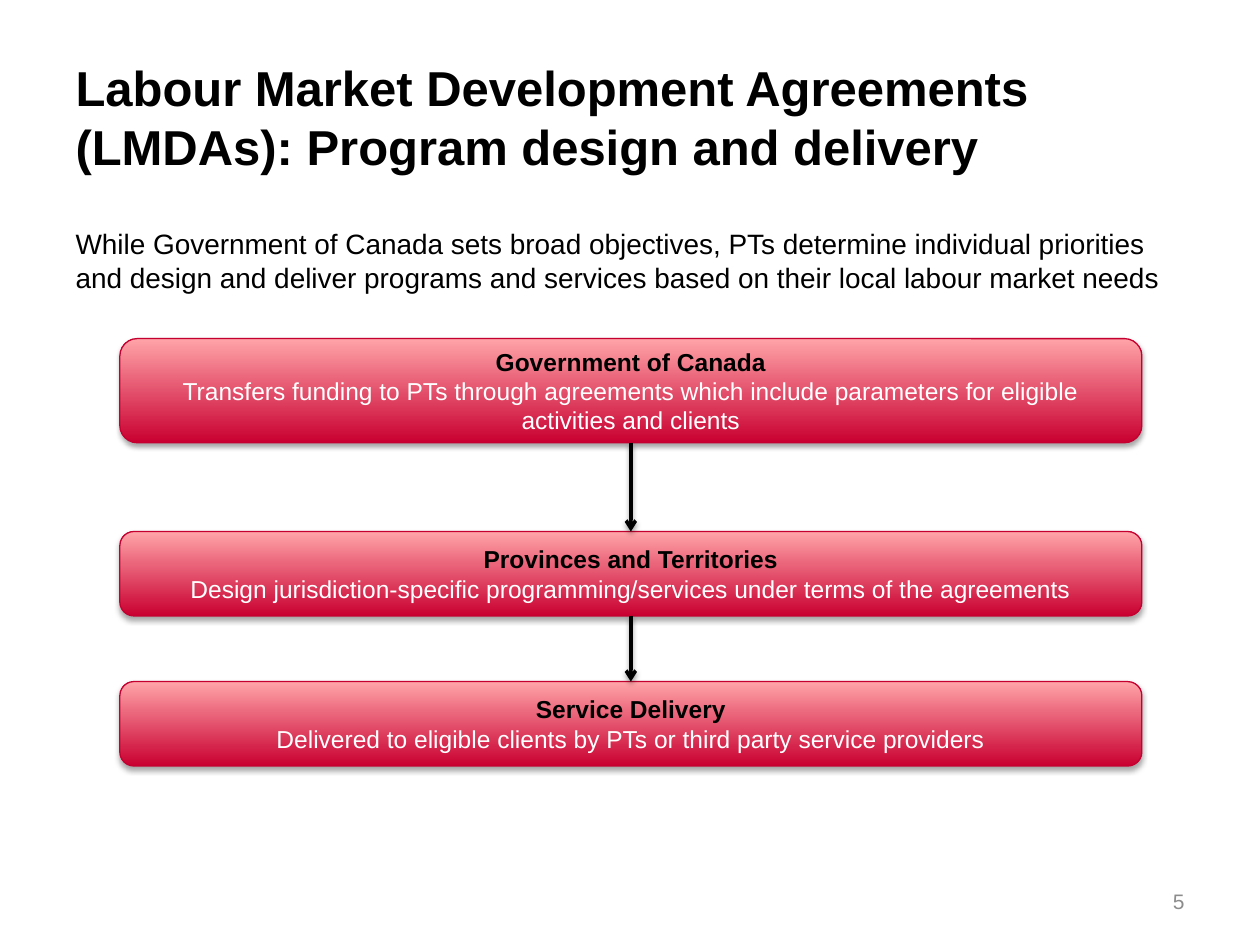
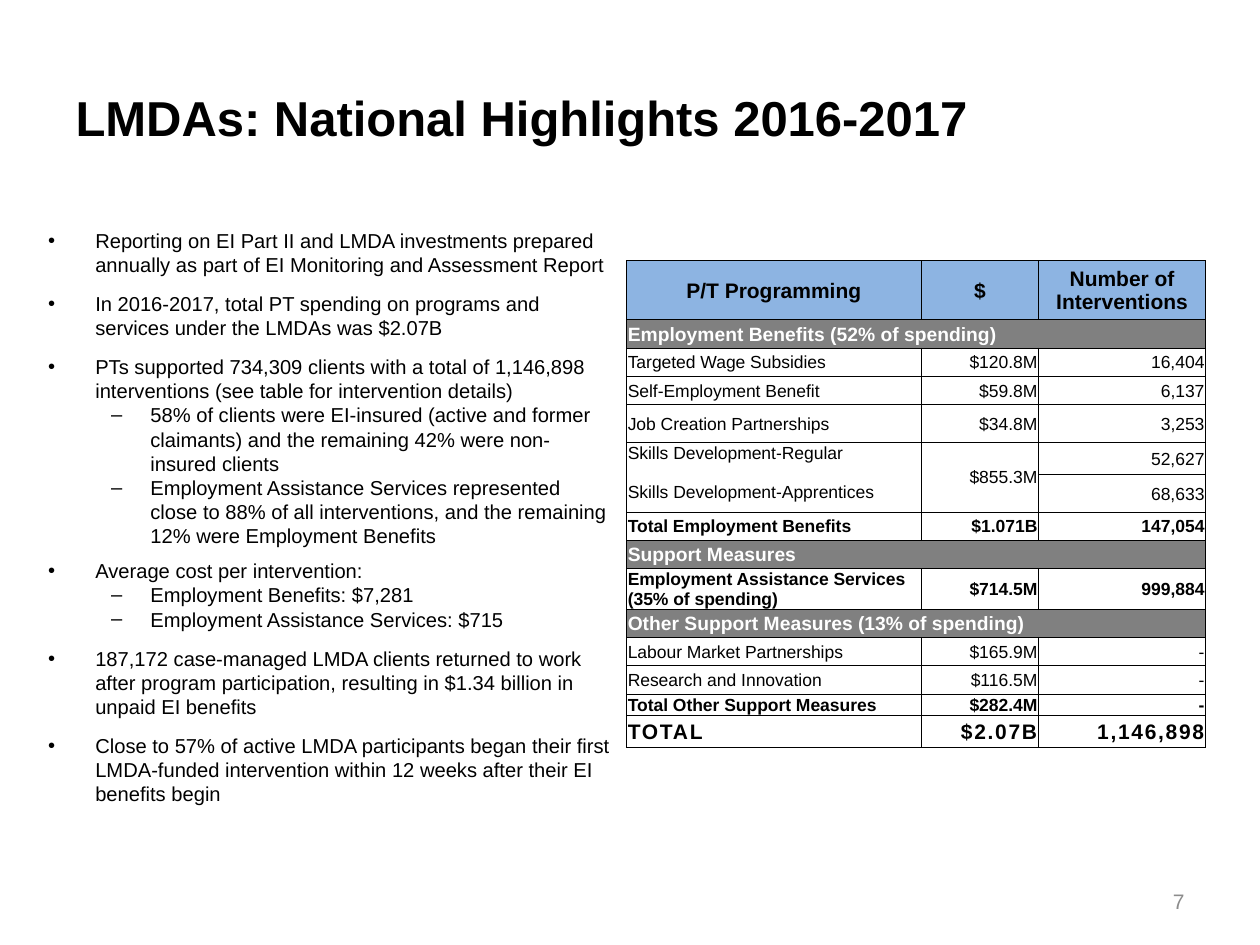
from lxml import etree
from pptx import Presentation
from pptx.dml.color import RGBColor
from pptx.enum import shapes, text
from pptx.oxml import ns
from pptx.util import Pt

# Shared look
FONT = "Arial"
BLACK = RGBColor(0x00, 0x00, 0x00)
WHITE = RGBColor(0xFF, 0xFF, 0xFF)
PAGE_GREY = RGBColor(0x8C, 0x8C, 0x8C)
SECTION_GREY = RGBColor(0x80, 0x80, 0x80)
HEADER_BLUE = RGBColor(0x8D, 0xB4, 0xE2)
DEEP_RED = RGBColor(0xC9, 0x00, 0x31)
PALE_RED = RGBColor(0xFF, 0xA4, 0xA8)
EDGE_RED = RGBColor(0xC5, 0x00, 0x30)

LEFT, CENTER, RIGHT = text.PP_ALIGN.LEFT, text.PP_ALIGN.CENTER, text.PP_ALIGN.RIGHT
TOP, MIDDLE = text.MSO_ANCHOR.TOP, text.MSO_ANCHOR.MIDDLE

# Flow chart: top, height, heading, description
STEPS = [
    (193.5, 59.5, "Government of Canada",
     "Transfers funding to PTs through agreements which include parameters "
     "for eligible activities and clients"),
    (303.75, 48.25, "Provinces and Territories",
     "Design jurisdiction-specific programming/services under terms of the agreements"),
    (389.5, 48.25, "Service Delivery",
     "Delivered to eligible clients by PTs or third party service providers"),
]

# Highlights: level, space before, wording
HIGHLIGHTS = [
    (0, 0, "Reporting on EI Part II and LMDA investments prepared annually as part of "
           "EI Monitoring and Assessment Report"),
    (0, 8.5, "In 2016-2017, total PT spending on programs and services under the LMDAs was $2.07B"),
    (0, 8.5, "PTs supported 734,309 clients with a total of 1,146,898 interventions "
             "(see table for intervention details)"),
    (1, 0, "58% of clients were EI-insured (active and former claimants) and the remaining "
           "42% were non-insured clients"),
    (1, 0, "Employment Assistance Services represented close to 88% of all interventions, "
           "and the remaining 12% were Employment Benefits"),
    (0, 6.25, "Average cost per intervention:"),
    (1, 0, "Employment Benefits: $7,281"),
    (1, 0, "Employment Assistance Services: $715"),
    (0, 8.5, "187,172 case-managed LMDA clients returned to work after program participation, "
             "resulting in $1.34 billion in unpaid EI benefits"),
    (0, 8.5, "Close to 57% of active LMDA participants began their first LMDA-funded "
             "intervention within 12 weeks after their EI benefits begin"),
]
LEVELS = [("•", 27, -27), ("–", 58.5, -22.5)]  # bullet, margin, indent

# Spending table: row kind, height, cells
SPENDING = [
    ("header", 33.75, "P/T Programming", "$", "Number of Interventions"),
    ("section", 16.2, "Employment Benefits (52% of spending)"),
    ("plain", 16.2, "Targeted Wage Subsidies", "$120.8M", "16,404"),
    ("plain", 16.2, "Self-Employment Benefit", "$59.8M", "6,137"),
    ("plain", 21.6, "Job Creation Partnerships", "$34.8M", "3,253"),
    ("plain", 18.5, "Skills Development-Regular\nSkills Development-Apprentices",
     "$855.3M", "52,627"),
    ("plain", 21.2, "", "", "68,633"),
    ("total", 16.2, "Total Employment Benefits", "$1.071B", "147,054"),
    ("section", 16.2, "Support Measures"),
    ("total", 18.5, "Employment Assistance Services\n(35% of spending)", "$714.5M", "999,884"),
    ("section", 16.2, "Other Support Measures (13% of spending)"),
    ("plain", 16.2, "Labour Market Partnerships", "$165.9M", "-"),
    ("plain", 16.2, "Research and Innovation", "$116.5M", "-"),
    ("total", 12, "Total Other Support Measures", "$282.4M", "-"),
    ("grand", 18.75, "TOTAL", "$2.07B", "1,146,898"),
]
SKILLS_ROW = 5
COLUMN_WIDTHS = (168.5, 67, 95.5)
ROW_STYLES = {  # fill, text size, colour, bold
    "header": (HEADER_BLUE, 12, BLACK, True),
    "section": (SECTION_GREY, 11, WHITE, True),
    "plain": (WHITE, 10, BLACK, False),
    "total": (WHITE, 10, BLACK, True),
    "grand": (WHITE, 12, BLACK, True),
}


def set_all(obj, **values):
    for name, value in values.items():
        setattr(obj, name, value)


def sub(parent, tag, **attrs):
    el = etree.SubElement(parent, ns.qn(tag))
    for name, value in attrs.items():
        el.set(name, str(value))
    return el


def write(p, words, size, color=BLACK, bold=False, align=LEFT, before=0):
    set_all(p, alignment=align, space_before=Pt(before))
    r = p.add_run()
    r.text = words
    set_all(r.font, name=FONT, size=Pt(size), bold=bold)
    r.font.color.rgb = color
    return r


def next_paragraph(tf, i):
    return tf.add_paragraph() if i else tf.paragraphs[0]


def place(sp, left, top, width, height, anchor):
    set_all(sp, left=Pt(left), top=Pt(top), width=Pt(width), height=Pt(height))
    set_all(sp.text_frame, word_wrap=True, vertical_anchor=anchor,
            auto_size=text.MSO_AUTO_SIZE.NONE)
    return sp.text_frame


def set_bullet(p, char, margin, indent):
    pPr = p._p.get_or_add_pPr()
    pPr.set("marL", str(Pt(margin)))
    pPr.set("indent", str(Pt(indent)))
    if char:
        sub(pPr, "a:buChar", char=char)
    else:
        sub(pPr, "a:buNone")


def add_shadow(effects, alpha, distance):
    shadow = sub(effects, "a:outerShdw", blurRad=Pt(3.1), dist=Pt(distance),
                 dir=90 * 60000, rotWithShape=0)
    sub(sub(shadow, "a:srgbClr", val=BLACK), "a:alpha", val=alpha * 1000)


def add_slide(prs, title, number):
    s = prs.slides.add_slide(prs.slide_layouts[1])
    tf = place(s.shapes.title, 36, 21.6, 648, 90, MIDDLE)
    write(tf.paragraphs[0], title, 28, bold=True)
    page = s.shapes.add_textbox(0, 0, 0, 0)
    tf = place(page, 516, 500.5, 168, 28.75, MIDDLE)
    write(tf.paragraphs[0], str(number), 12, PAGE_GREY, align=RIGHT)
    return s


def add_step(s, top, height, heading, description):
    sp = s.shapes.add_shape(shapes.MSO_SHAPE.ROUNDED_RECTANGLE, 0, 0, 0, 0)
    tf = place(sp, 68.5, top, 584, height, MIDDLE)
    sp.fill.gradient()
    sp.fill.gradient_angle = 90
    for stop, color in zip(sp.fill.gradient_stops, (DEEP_RED, PALE_RED)):
        stop.color.rgb = color
    sp.line.color.rgb = EDGE_RED
    sp.line.width = Pt(0.75)
    sp.shadow.inherit = False
    add_shadow(sp._element.spPr.find(ns.qn("a:effectLst")), 35, 1.8)
    write(tf.paragraphs[0], heading, 14, bold=True, align=CENTER)
    write(tf.add_paragraph(), description, 14, WHITE, align=CENTER)
    return sp


def add_arrow(s, upper, lower):
    c = s.shapes.add_connector(shapes.MSO_CONNECTOR.STRAIGHT, 0, 0, 0, 0)
    c.begin_connect(upper, 2)
    c.end_connect(lower, 0)
    c.line.color.rgb = BLACK
    c.line.width = Pt(2)
    sub(c.line._get_or_add_ln(), "a:tailEnd", type="arrow")
    add_shadow(sub(c._element.spPr, "a:effectLst"), 38, 1.6)


def add_highlights(s):
    tf = place(s.placeholders[1], 20.25, 126.75, 337, 334, TOP)
    for i, (level, before, words) in enumerate(HIGHLIGHTS):
        p = next_paragraph(tf, i)
        p.level = level
        set_bullet(p, *LEVELS[level])
        write(p, words, 11.5, before=before)


def add_borders(cell):
    tcPr = cell._tc.get_or_add_tcPr()
    for side in "LRTB":
        ln = sub(tcPr, f"a:ln{side}", w=Pt(0.5))
        sub(sub(ln, "a:solidFill"), "a:srgbClr", val=BLACK)


def fill_cell(cell, kind, column, words, gap):
    color, size, ink, bold = ROW_STYLES[kind]
    add_borders(cell)
    cell.fill.solid()
    cell.fill.fore_color.rgb = color
    set_all(cell, margin_left=Pt(0.75), margin_right=Pt(0.75), margin_top=Pt(0.75),
            margin_bottom=0, vertical_anchor=TOP if gap else MIDDLE)
    align = CENTER if kind == "header" else RIGHT if column else LEFT
    if not words:
        return
    for i, line in enumerate(words.split("\n")):
        r = write(next_paragraph(cell.text_frame, i), line, size, ink, bold, align,
                  gap if i else 0)
        if kind == "grand":
            r._r.get_or_add_rPr().set("spc", "100")


def add_spending_table(s):
    heights = [row[1] for row in SPENDING]
    frame = s.shapes.add_table(len(SPENDING), len(COLUMN_WIDTHS), Pt(358), Pt(149),
                               Pt(sum(COLUMN_WIDTHS)), Pt(sum(heights)))
    table = frame.table
    set_all(table, first_row=False, horz_banding=False)
    for column, width in zip(table.columns, COLUMN_WIDTHS):
        column.width = Pt(width)
    for i, (kind, height, *words) in enumerate(SPENDING):
        table.rows[i].height = Pt(height)
        for j in range(len(COLUMN_WIDTHS)):
            gap = 11 if (i, j) == (SKILLS_ROW, 0) else 0
            fill_cell(table.cell(i, j), kind, j, words[j] if j < len(words) else "", gap)
        if kind == "section":
            table.cell(i, 0).merge(table.cell(i, len(COLUMN_WIDTHS) - 1))
    for j in range(2):
        table.cell(SKILLS_ROW, j).merge(table.cell(SKILLS_ROW + 1, j))


def main():
    prs = Presentation()
    set_all(prs, slide_width=Pt(720), slide_height=Pt(540))

    # Program design and delivery
    s = add_slide(prs, "Labour Market Development Agreements (LMDAs): "
                       "Program design and delivery", 5)
    p = place(s.placeholders[1], 36, 126, 648, 67.5, TOP).paragraphs[0]
    set_bullet(p, None, 0, 0)
    write(p, "While Government of Canada sets broad objectives, PTs determine individual "
             "priorities and design and deliver programs and services based on their "
             "local labour market needs", 16)
    steps = [add_step(s, *step) for step in STEPS]
    for upper, lower in zip(steps, steps[1:]):
        add_arrow(s, upper, lower)

    # National highlights
    s = add_slide(prs, "LMDAs: National Highlights 2016-2017", 7)
    add_highlights(s)
    add_spending_table(s)

    prs.save("out.pptx")


if __name__ == "__main__":
    main()
